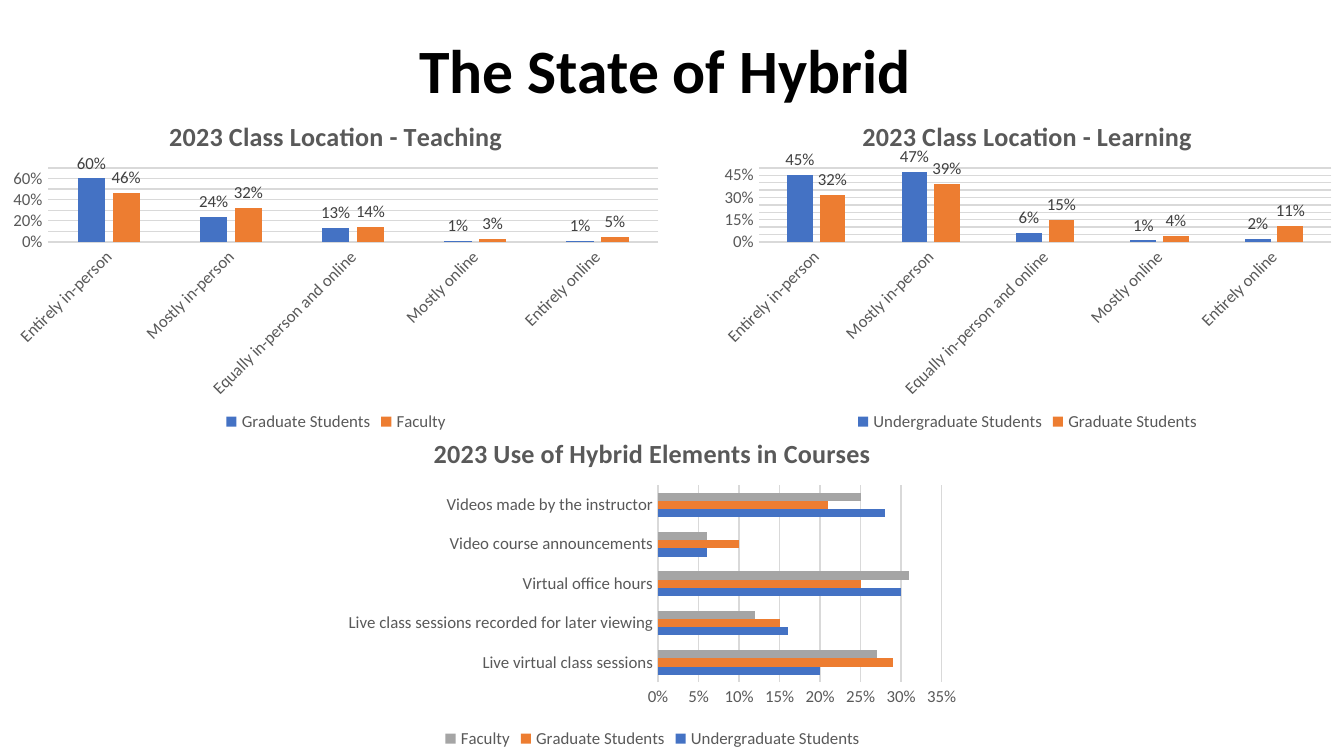
from pptx import Presentation
from pptx.chart.data import CategoryChartData
from pptx.dml.color import RGBColor
from pptx.enum.chart import XL_CHART_TYPE, XL_LABEL_POSITION, XL_LEGEND_POSITION, XL_TICK_MARK
from pptx.enum.text import MSO_ANCHOR, PP_ALIGN
from pptx.oxml.ns import qn
from pptx.util import Inches, Pt

COLUMNS = XL_CHART_TYPE.COLUMN_CLUSTERED
BARS = XL_CHART_TYPE.BAR_CLUSTERED
LABEL_OUTSIDE = XL_LABEL_POSITION.OUTSIDE_END
LEGEND_BOTTOM = XL_LEGEND_POSITION.BOTTOM
NO_TICK = XL_TICK_MARK.NONE
MIDDLE = MSO_ANCHOR.MIDDLE
CENTER = PP_ALIGN.CENTER

BLACK = RGBColor(0x00, 0x00, 0x00)
DARK_GRAY = RGBColor(0x40, 0x40, 0x40)
TEXT_GRAY = RGBColor(0x59, 0x59, 0x59)
LINE_GRAY = RGBColor(0xD9, 0xD9, 0xD9)
BLUE = RGBColor(0x44, 0x72, 0xC4)
ORANGE = RGBColor(0xED, 0x7D, 0x31)
GRAY = RGBColor(0xA5, 0xA5, 0xA5)
SERIES_COLORS = (BLUE, ORANGE, GRAY)

FONT = "Calibri"
PERCENT = "0%"
SLIDE_WIDTH = 10
SLIDE_HEIGHT = SLIDE_WIDTH * 9 / 16
CHART_WIDTH, CHART_HEIGHT = 4.71, 2.51
TOP_ROW, BOTTOM_ROW = 0.74, 3.1
TITLE_MARGIN = 0.69

LOCATIONS = ("Entirely in-person", "Mostly in-person", "Equally in-person and online",
             "Mostly online", "Entirely online")
TEACHING = {
    "Graduate Students": (0.60, 0.24, 0.13, 0.01, 0.01),
    "Faculty": (0.46, 0.32, 0.14, 0.03, 0.05),
}
LEARNING = {
    "Undergraduate Students": (0.45, 0.47, 0.06, 0.01, 0.02),
    "Graduate Students": (0.32, 0.39, 0.15, 0.04, 0.11),
}
HYBRID_ELEMENTS = ("Live virtual class sessions",
                   "Live class sessions recorded for later viewing",
                   "Virtual office hours", "Video course announcements",
                   "Videos made by the instructor")
HYBRID_USE = {
    "Undergraduate Students": (0.20, 0.16, 0.30, 0.06, 0.28),
    "Graduate Students": (0.29, 0.15, 0.25, 0.10, 0.21),
    "Faculty": (0.27, 0.12, 0.31, 0.06, 0.25),
}


def format_font(font, size=9, color=TEXT_GRAY, bold=False):
    font.name = FONT
    font.size = Pt(size)
    font.bold = bold
    font.color.rgb = color


def write_text(frame, text, align=CENTER, line_spacing=None, **font_format):
    paragraph = frame.paragraphs[0]
    paragraph.alignment = align
    paragraph.line_spacing = line_spacing
    run = paragraph.add_run()
    run.text = text
    format_font(run.font, **font_format)


def add_title(slide, text):
    title = slide.shapes.title
    title.left, title.top = Inches(TITLE_MARGIN), 0
    title.width, title.height = Inches(SLIDE_WIDTH - 2 * TITLE_MARGIN), Inches(1.09)
    title.text_frame.vertical_anchor = MIDDLE
    write_text(title.text_frame, text, line_spacing=0.9, size=33, color=BLACK, bold=True)


def style_line(line):
    line.color.rgb = LINE_GRAY
    line.width = Pt(0.75)


def style_axes(chart, top_value, step):
    for axis in (chart.category_axis, chart.value_axis):
        axis.major_tick_mark = axis.minor_tick_mark = NO_TICK
        format_font(axis.tick_labels.font)
    style_line(chart.category_axis.format.line)
    values = chart.value_axis
    values.minimum_scale, values.maximum_scale = 0, top_value
    values.major_unit = step
    values.format.line.fill.background()
    style_line(values.major_gridlines.format.line)
    values.tick_labels.number_format = PERCENT
    values.tick_labels.number_format_is_linked = False


def slant_categories(chart):
    """Turn the category labels 45 degrees, reading upwards."""
    chart_tree = chart.category_axis.tick_labels.font._element.getroottree()
    body = chart_tree.find(f".//{qn('c:catAx')}/{qn('c:txPr')}/{qn('a:bodyPr')}")
    body.set("rot", "-2700000")
    body.set("vert", "horz")


def label_values(series):
    labels = series.data_labels
    labels.show_value = True
    labels.position = LABEL_OUTSIDE
    labels.number_format = PERCENT
    labels.number_format_is_linked = False
    format_font(labels.font, color=DARK_GRAY)


def add_percent_chart(slide, kind, title, categories, shares, left, top, width,
                      top_value, step, gap, overlap=0):
    data = CategoryChartData(number_format=PERCENT)
    data.categories = categories
    for group, values in shares.items():
        data.add_series(group, values)
    chart = slide.shapes.add_chart(kind, Inches(left), Inches(top), Inches(width),
                                   Inches(CHART_HEIGHT), data).chart
    format_font(chart.font, size=10, color=BLACK)
    chart.has_title = True
    write_text(chart.chart_title.text_frame, title, size=14, bold=True)
    chart.chart_title.include_in_layout = False
    chart.has_legend = True
    chart.legend.position = LEGEND_BOTTOM
    chart.legend.include_in_layout = False
    format_font(chart.legend.font)
    style_axes(chart, top_value, step)

    plot = chart.plots[0]
    plot.vary_by_categories = False
    plot.gap_width = gap
    plot.overlap = overlap
    for series, color in zip(plot.series, SERIES_COLORS):
        series.format.fill.solid()
        series.format.fill.fore_color.rgb = color
    return chart


def add_location_chart(slide, title, shares, left, width, top_value, step):
    chart = add_percent_chart(slide, COLUMNS, title, LOCATIONS, shares, left, TOP_ROW, width,
                              top_value, step, gap=219, overlap=-27)
    slant_categories(chart)
    for series in chart.plots[0].series:
        label_values(series)


def main():
    presentation = Presentation()
    presentation.slide_width = Inches(SLIDE_WIDTH)
    presentation.slide_height = Inches(SLIDE_HEIGHT)
    slide = presentation.slides.add_slide(presentation.slide_layouts.get_by_name("Title Only"))

    add_title(slide, "The State of Hybrid ")
    add_location_chart(slide, "2023 Class Location - Learning", LEARNING,
                       left=SLIDE_WIDTH - CHART_WIDTH, width=CHART_WIDTH,
                       top_value=0.5, step=0.05)
    add_percent_chart(slide, BARS, "2023 Use of Hybrid Elements in Courses", HYBRID_ELEMENTS,
                      HYBRID_USE, left=SLIDE_WIDTH / 4, top=BOTTOM_ROW, width=CHART_WIDTH,
                      top_value=0.35, step=0.05, gap=182)
    add_location_chart(slide, "2023 Class Location - Teaching", TEACHING,
                       left=0, width=SLIDE_WIDTH / 2, top_value=0.7, step=0.1)
    presentation.save("out.pptx")


if __name__ == "__main__":
    main()
